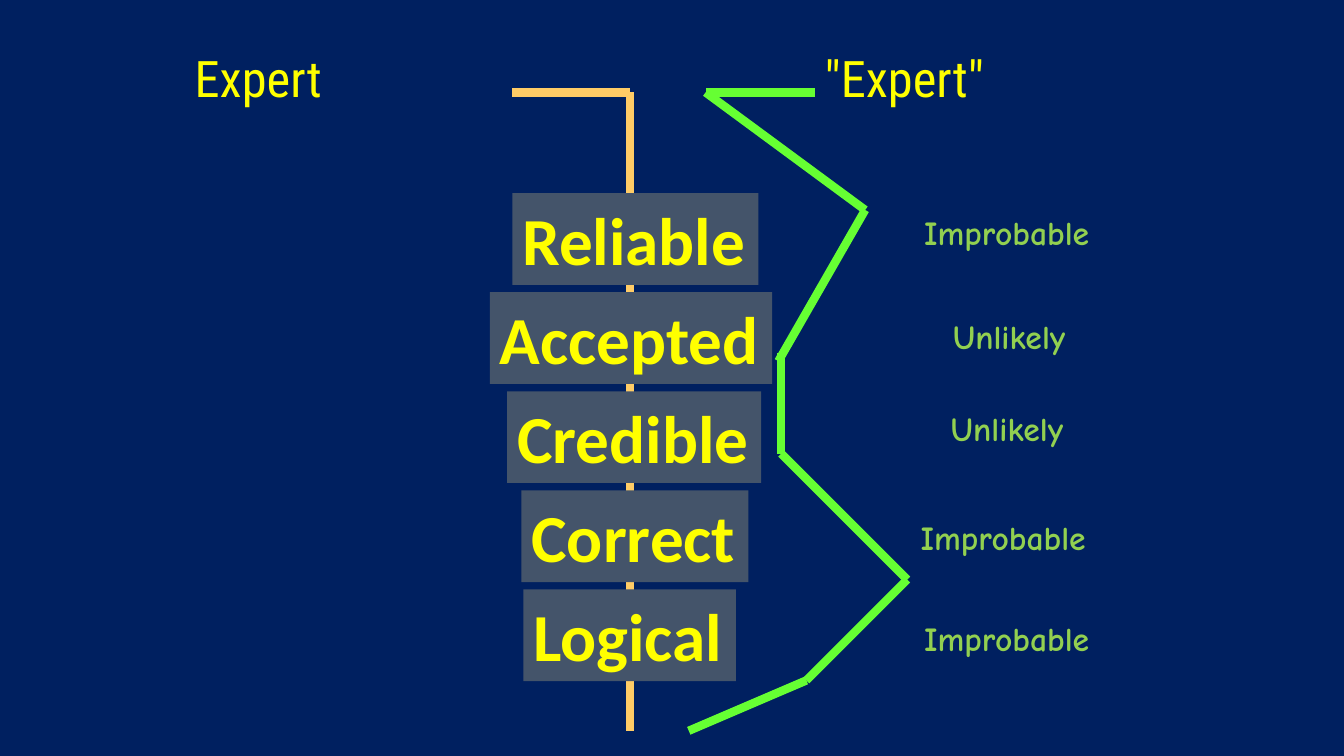
import itertools
from dataclasses import dataclass

import pptx
import pptx.dml.color
import pptx.enum.shapes
import pptx.enum.text
import pptx.oxml
import pptx.oxml.ns
import pptx.util
from lxml import etree

Pt = pptx.util.Pt
qn = pptx.oxml.ns.qn


@dataclass(frozen=True)
class Theme:
    background: str = "002060"
    straight: str = "FFCC66"
    crooked: str = "66FF33"
    panel: str = "44546A"
    bright: str = "FFFF00"
    verdict: str = "92D050"
    heading_font: str = "Roboto Condensed"
    criterion_font: str = "Calibri"
    verdict_font: str = "Comic Neue"
    heading_size: int = 36
    criterion_size: int = 48
    verdict_size: int = 24
    track_width: int = 6


THEME = Theme()


def rgb(value):
    return pptx.dml.color.RGBColor.from_string(value)


def write(holder, text, font, size, color, bold=False, grow=True):
    """Put one unwrapped, left-aligned line of text in a shape."""
    frame = holder.text_frame
    frame.text = text
    frame.word_wrap = False
    if grow:
        frame.auto_size = pptx.enum.text.MSO_AUTO_SIZE.SHAPE_TO_FIT_TEXT
    frame.vertical_anchor = pptx.enum.text.MSO_ANCHOR.TOP
    frame.paragraphs[0].alignment = pptx.enum.text.PP_ALIGN.LEFT
    run = frame.paragraphs[0].runs[0]
    run.font.name = font
    run.font.size = Pt(size)
    run.font.bold = bold
    run.font.color.rgb = rgb(color)
    return run


def add_heading(slide, box, text):
    heading = slide.shapes.add_textbox(*map(Pt, box))
    run = write(heading, text, THEME.heading_font, THEME.heading_size,
                THEME.bright, grow=False)
    # Thin outline in the text colour
    outline = etree.Element(qn("a:ln"), w=str(Pt(1.5)))
    fill = etree.SubElement(outline, qn("a:solidFill"))
    etree.SubElement(fill, qn("a:srgbClr"), val=THEME.bright)
    run.font._element.insert(0, outline)


def add_track(slide, origin, chains, color):
    """Draw chains of points, relative to origin, as one group of lines."""
    left, top = origin
    track = slide.shapes.add_group_shape()
    for chain in chains:
        for (x1, y1), (x2, y2) in itertools.pairwise(chain):
            leg = track.shapes.add_connector(
                pptx.enum.shapes.MSO_CONNECTOR.STRAIGHT,
                Pt(left + x1), Pt(top + y1), Pt(left + x2), Pt(top + y2))
            leg.line.color.rgb = rgb(color)
            leg.line.width = Pt(THEME.track_width)
            etree.SubElement(leg._element.spPr, qn("a:effectLst"))


def add_criteria(slide, box, criteria):
    """Stack the criteria at an even pitch inside the box."""
    left, top, _, height = box
    panel_height = 65.5
    pitch = (height - panel_height) / (len(criteria) - 1)
    for row, (text, indent, width) in enumerate(criteria):
        panel = slide.shapes.add_shape(
            pptx.enum.shapes.MSO_SHAPE.RECTANGLE,
            Pt(left + indent), Pt(top + row * pitch), Pt(width), Pt(panel_height))
        panel.shadow.inherit = False
        panel.fill.solid()
        panel.fill.fore_color.rgb = rgb(THEME.panel)
        panel.line.fill.background()
        write(panel, text, THEME.criterion_font, THEME.criterion_size,
              THEME.bright, bold=True)


def add_verdicts(slide, box, verdicts):
    left, top = box[:2]
    widths = {"Improbable": 145.4, "Unlikely": 104.4}
    for text, indent, drop in verdicts:
        verdict = slide.shapes.add_textbox(
            Pt(left + indent), Pt(top + drop), Pt(widths[text]), Pt(36))
        write(verdict, text, THEME.verdict_font, THEME.verdict_size,
              THEME.verdict, bold=True)


def build_expert_slide(deck):
    slide = deck.slides.add_slide(deck.slide_layouts[6])
    slide.background.fill.solid()
    slide.background.fill.fore_color.rgb = rgb(THEME.background)

    # Crooked path of the so-called expert
    add_track(slide, (492, 66), [
        [(90, 0), (12, 0), (126, 84), (64, 192)],
        [(66, 186), (66, 258), (156, 348), (84, 420), (0, 456)],
    ], THEME.crooked)

    # Straight path of the real expert
    add_track(slide, (366, 66), [[(0, 0), (84, 0), (84, 456)]], THEME.straight)

    # Headings
    add_heading(slide, (132, 30, 210, 72), "Expert")
    add_heading(slide, (582, 30, 210, 72), '"Expert"')

    # Criteria along the straight path: text, indent, width
    add_criteria(slide, (350, 138, 202, 348.5), [
        ("Reliable", 16, 175.7),
        ("Accepted", 0, 201.6),
        ("Credible", 12.3, 181.4),
        ("Correct", 22.5, 162),
        ("Logical", 23.8, 151.9),
    ])

    # Verdicts beside the crooked path: text, indent, drop
    add_verdicts(slide, (650, 147.6, 149, 326), [
        ("Improbable", 3, 0),
        ("Unlikely", 23.5, 74.4),
        ("Unlikely", 22, 140.4),
        ("Improbable", 0.5, 218.4),
        ("Improbable", 3, 290.4),
    ])


def main():
    deck = pptx.Presentation()
    deck.slide_width, deck.slide_height = Pt(960), Pt(540)
    build_expert_slide(deck)
    deck.save("out.pptx")


if __name__ == "__main__":
    main()
